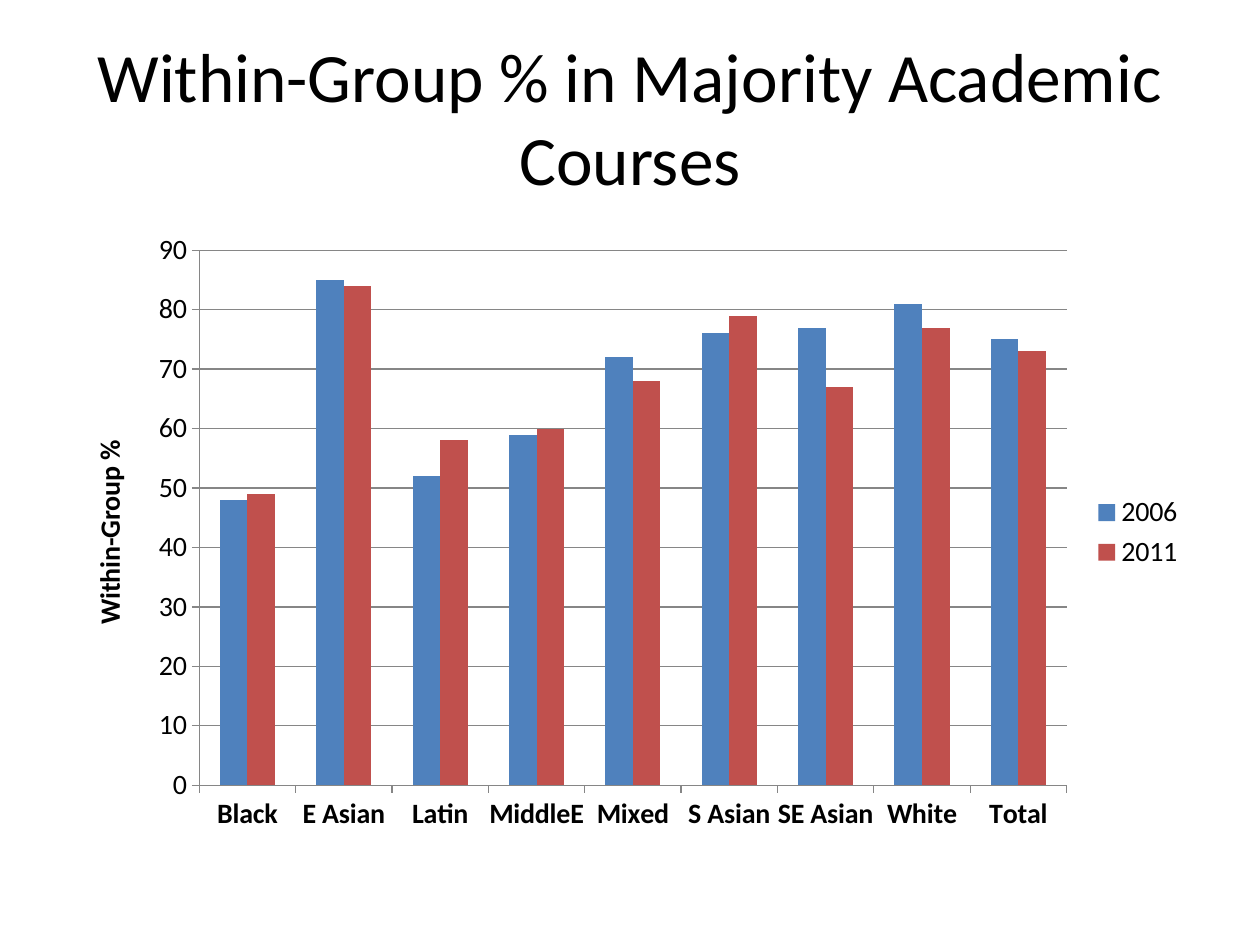
from pptx import Presentation
from pptx import util as u
from pptx.chart.data import CategoryChartData
from pptx.dml.color import RGBColor
from pptx.enum import chart as ch
from pptx.enum import text

HEADING = "Within-Group % in Majority Academic Courses"
AXIS_CAPTION = "Within-Group %"
GROUPS = ["Black", "E Asian", "Latin", "MiddleE", "Mixed",
          "S Asian", "SE Asian", "White", "Total"]
BLACK = RGBColor(0x00, 0x00, 0x00)
GREY = RGBColor(0x86, 0x86, 0x86)
BLUE = RGBColor(0x4F, 0x81, 0xBD)
RED = RGBColor(0xC0, 0x50, 0x4D)
YEARS = [
    ("2006", BLUE, [48, 85, 52, 59, 72, 76, 77, 81, 75]),
    ("2011", RED, [49, 84, 58, 60, 68, 79, 67, 77, 73]),
]
FONT = "Calibri"
MARGIN = u.Cm(1.27)


def set_font(font, size, bold=False):
    font.name = FONT
    font.size = u.Pt(size)
    font.bold = bold
    font.color.rgb = BLACK


def set_line(line):
    line.color.rgb = GREY
    line.width = u.Pt(0.75)


def add_heading(slide, width):
    frame = slide.shapes.add_textbox(MARGIN, u.Cm(0.76), width, u.Cm(3.18)).text_frame
    frame.word_wrap = True
    frame.vertical_anchor = text.MSO_ANCHOR.MIDDLE
    heading = frame.paragraphs[0]
    heading.text = HEADING
    heading.alignment = text.PP_ALIGN.CENTER
    set_font(heading.font, 39.6)


def add_courses_chart(slide, width):
    data = CategoryChartData()
    data.categories = GROUPS
    for year, _, shares in YEARS:
        data.add_series(year, shares)
    courses = slide.shapes.add_chart(
        ch.XL_CHART_TYPE.COLUMN_CLUSTERED,
        MARGIN, u.Cm(4.45), width, u.Cm(12.57), data).chart
    set_font(courses.font, 16)
    courses.has_title = False
    courses.has_legend = True
    courses.legend.position = ch.XL_LEGEND_POSITION.RIGHT
    courses.legend.include_in_layout = False

    columns = courses.plots[0]
    columns.gap_width = 150
    columns.overlap = 0
    columns.vary_by_categories = False
    for series, (_, color, _) in zip(columns.series, YEARS):
        series.format.fill.solid()
        series.format.fill.fore_color.rgb = color

    groups, shares = courses.category_axis, courses.value_axis
    for axis in (groups, shares):
        axis.major_tick_mark = ch.XL_TICK_MARK.OUTSIDE
        set_line(axis.format.line)
    set_font(groups.tick_labels.font, 16, bold=True)
    set_font(shares.tick_labels.font, 16)
    shares.minimum_scale, shares.maximum_scale = 0, 90
    shares.major_unit = 10
    shares.has_major_gridlines = True
    set_line(shares.major_gridlines.format.line)
    caption = shares.axis_title.text_frame.paragraphs[0]
    caption.text = AXIS_CAPTION
    set_font(caption.font, 16, bold=True)


def main():
    deck = Presentation()
    deck.slide_width, deck.slide_height = u.Cm(25.4), u.Cm(19.05)
    slide = deck.slides.add_slide(deck.slide_layouts[6])
    width = deck.slide_width - 2 * MARGIN
    add_heading(slide, width)
    add_courses_chart(slide, width)
    deck.save("out.pptx")


if __name__ == "__main__":
    main()
